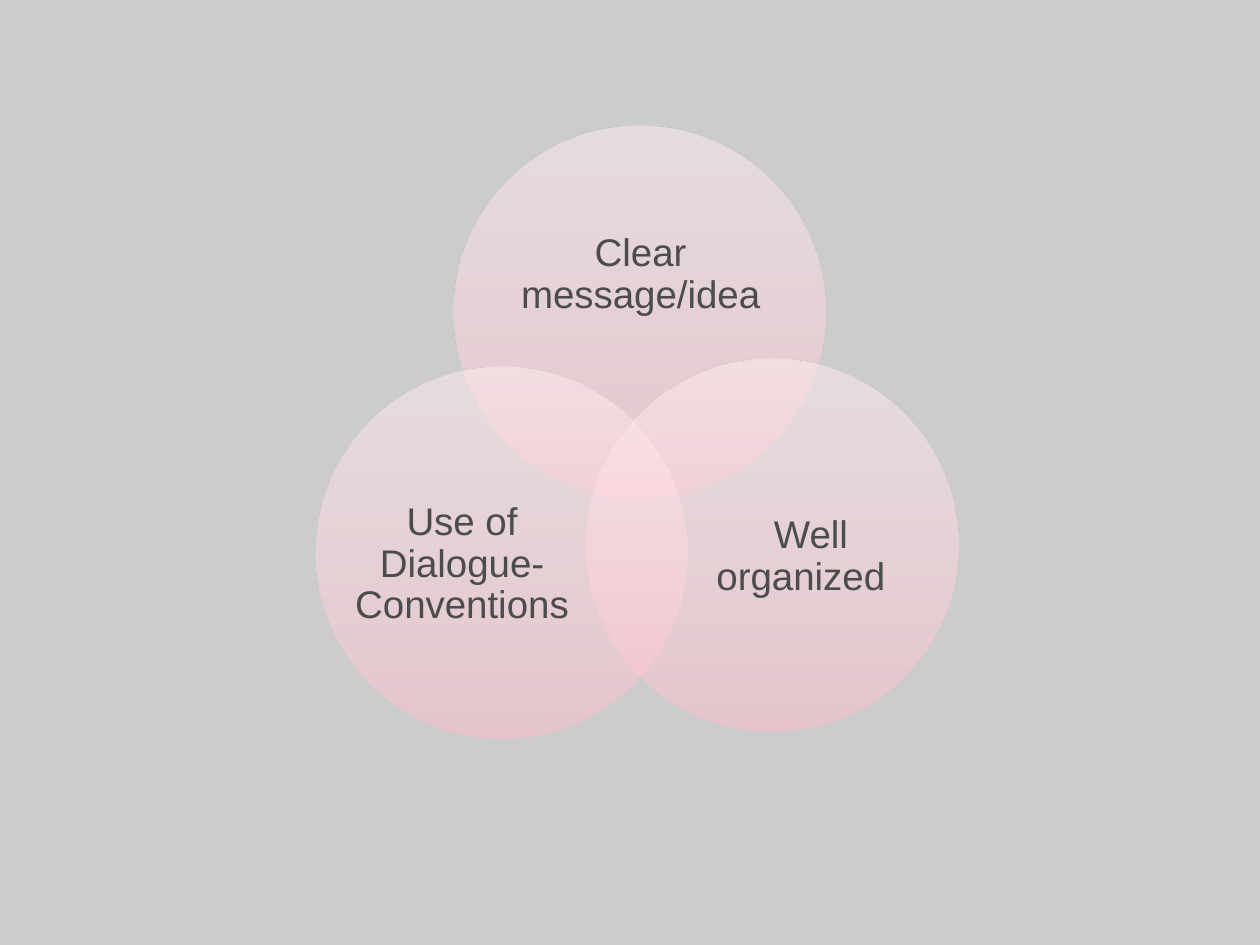
"""Build a slide with a three-circle Venn diagram of good writing traits."""
import lxml.etree
import pptx
import pptx.dml.color
import pptx.enum.shapes
import pptx.enum.text
import pptx.oxml.ns
import pptx.util

Pt = pptx.util.Pt
qn = pptx.oxml.ns.qn


def rgb(color):
    """Return the colour for a hex string."""
    return pptx.dml.color.RGBColor.from_string(color)


def add_text(shapes, text, *, box, size=22, font="Arial", color="4C4C4C"):
    """Add a centred, wrapped text box without margins."""
    tb = shapes.add_textbox(*map(Pt, box))
    tf = tb.text_frame
    tf.word_wrap = True
    tf.vertical_anchor = pptx.enum.text.MSO_ANCHOR.MIDDLE
    tf.margin_left = tf.margin_top = tf.margin_right = tf.margin_bottom = 0
    p = tf.paragraphs[0]
    p.alignment = pptx.enum.text.PP_ALIGN.CENTER
    p.line_spacing = 0.9
    r = p.add_run()
    r.text = text
    r.font.size = Pt(size)
    r.font.name = font
    r.font.color.rgb = rgb(color)


prs = pptx.Presentation()
prs.slide_width, prs.slide_height = Pt(720), Pt(540)
slide = prs.slides.add_slide(prs.slide_layouts[6])
slide.background.fill.solid()
slide.background.fill.fore_color.rgb = rgb("CCCCCC")

diameter = 212.8
stops = [(0, "FFBDCD"), (35, "FFD1DB"), (100, "FFEEF1")]
circles = [
    ("Clear message/idea", (259, 71.8), (288, 109.4, 156.2, 95.8)),
    ("Well organized\t", (334.8, 205), (399.6, 260, 127.6, 116.8)),
    ("Use of Dialogue-Conventions", (180.2, 209.4), (200.2, 264.4, 127.6, 116.8)),
]

venn = slide.shapes.add_group_shape()
for text, (left, top), box in circles:
    sp = venn.shapes.add_shape(
        pptx.enum.shapes.MSO_SHAPE.OVAL, Pt(left), Pt(top), Pt(diameter), Pt(diameter)
    )
    grad = lxml.etree.SubElement(sp._element.spPr, qn("a:gradFill"), rotWithShape="1")
    gs_list = lxml.etree.SubElement(grad, qn("a:gsLst"))
    for pos, color in stops:
        gs = lxml.etree.SubElement(gs_list, qn("a:gs"), pos=str(pos * 1000))
        clr = lxml.etree.SubElement(gs, qn("a:srgbClr"), val=color)
        lxml.etree.SubElement(clr, qn("a:alpha"), val="50000")
    lxml.etree.SubElement(grad, qn("a:lin"), ang=str(270 * 60000), scaled="1")
    sp.line.fill.background()
    sp.shadow.inherit = False
    add_text(venn.shapes, text, box=box)

prs.save("out.pptx")
